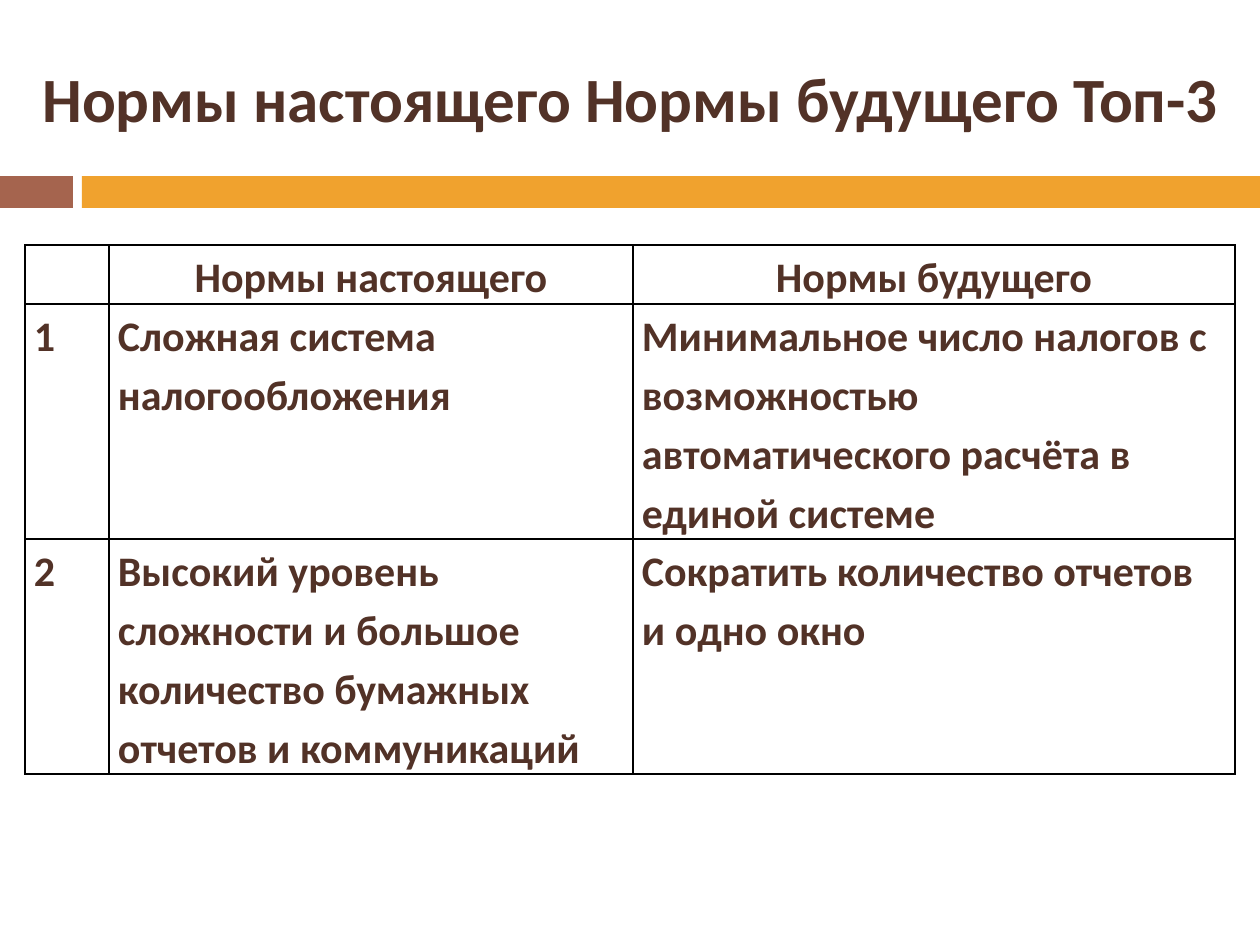
from lxml import etree
from pptx import Presentation, util as u
from pptx.dml.color import RGBColor
from pptx.enum import shapes, text
from pptx.oxml.ns import qn

TITLE = "Нормы настоящего Нормы будущего Топ-3"
NORMS = [
    ("", "Нормы настоящего", "Нормы будущего"),
    ("1", "Сложная система налогообложения",
     "Минимальное число налогов с возможностью автоматического расчёта в единой системе"),
    ("2", "Высокий уровень сложности и большое количество бумажных отчетов и коммуникаций",
     "Сократить количество отчетов и одно окно"),
]
COLUMN_WIDTHS = (84, 524, 602)
ROW_HEIGHTS = (59, 235, 235)
BANDS = [(0, 73, "A5644E"), (82, 1178, "F0A22E")]  # left, width, colour
BROWN = "523227"


def px(n):
    return u.Emu(round(n * 914400 / 126))


def colour(code):
    return RGBColor.from_string(code)


def write(frame, content, size, align=text.PP_ALIGN.LEFT, spacing=1.0):
    frame.word_wrap = True
    paragraph = frame.paragraphs[0]
    paragraph.alignment = align
    paragraph.line_spacing = spacing
    run = paragraph.add_run()
    run.text = content
    run.font.name = "Calibri"
    run.font.size = u.Pt(size)
    run.font.bold = True
    run.font.color.rgb = colour(BROWN)


def outline(cell):
    """Draw a 1 pt black border on all four sides of a cell."""
    properties = cell._tc.get_or_add_tcPr()
    for index, side in enumerate(("a:lnL", "a:lnR", "a:lnT", "a:lnB")):
        line = etree.Element(qn(side), w=str(u.Pt(1)))
        fill = etree.SubElement(line, qn("a:solidFill"))
        etree.SubElement(fill, qn("a:srgbClr"), val="000000")
        properties.insert(index, line)


deck = Presentation()
deck.slide_width, deck.slide_height = px(1260), px(945)
slide = deck.slides.add_slide(deck.slide_layouts[6])

for left, width, shade in BANDS:
    band = slide.shapes.add_shape(
        shapes.MSO_SHAPE.RECTANGLE, px(left), px(176), px(width), px(32))
    band.shadow.inherit = False
    band.fill.solid()
    band.fill.fore_color.rgb = colour(shade)
    band.line.fill.background()

title = slide.shapes.add_textbox(px(20), px(29), px(1221), px(136)).text_frame
title.vertical_anchor = text.MSO_ANCHOR.MIDDLE
write(title, TITLE, 36, align=text.PP_ALIGN.CENTER)

table = slide.shapes.add_table(
    len(NORMS), len(COLUMN_WIDTHS), px(25), px(245),
    px(sum(COLUMN_WIDTHS)), px(sum(ROW_HEIGHTS))).table
table.first_row = table.horz_banding = False
for column, width in zip(table.columns, COLUMN_WIDTHS):
    column.width = px(width)
for r, (norm, height) in enumerate(zip(NORMS, ROW_HEIGHTS)):
    table.rows[r].height = px(height)
    for c, content in enumerate(norm):
        cell = table.cell(r, c)
        cell.margin_left = cell.margin_right = px(9)
        cell.margin_top = cell.margin_bottom = 0
        cell.fill.background()
        outline(cell)
        if content:
            align = text.PP_ALIGN.LEFT if r else text.PP_ALIGN.CENTER
            write(cell.text_frame, content, 24, align=align, spacing=1.15)

deck.save("out.pptx")
